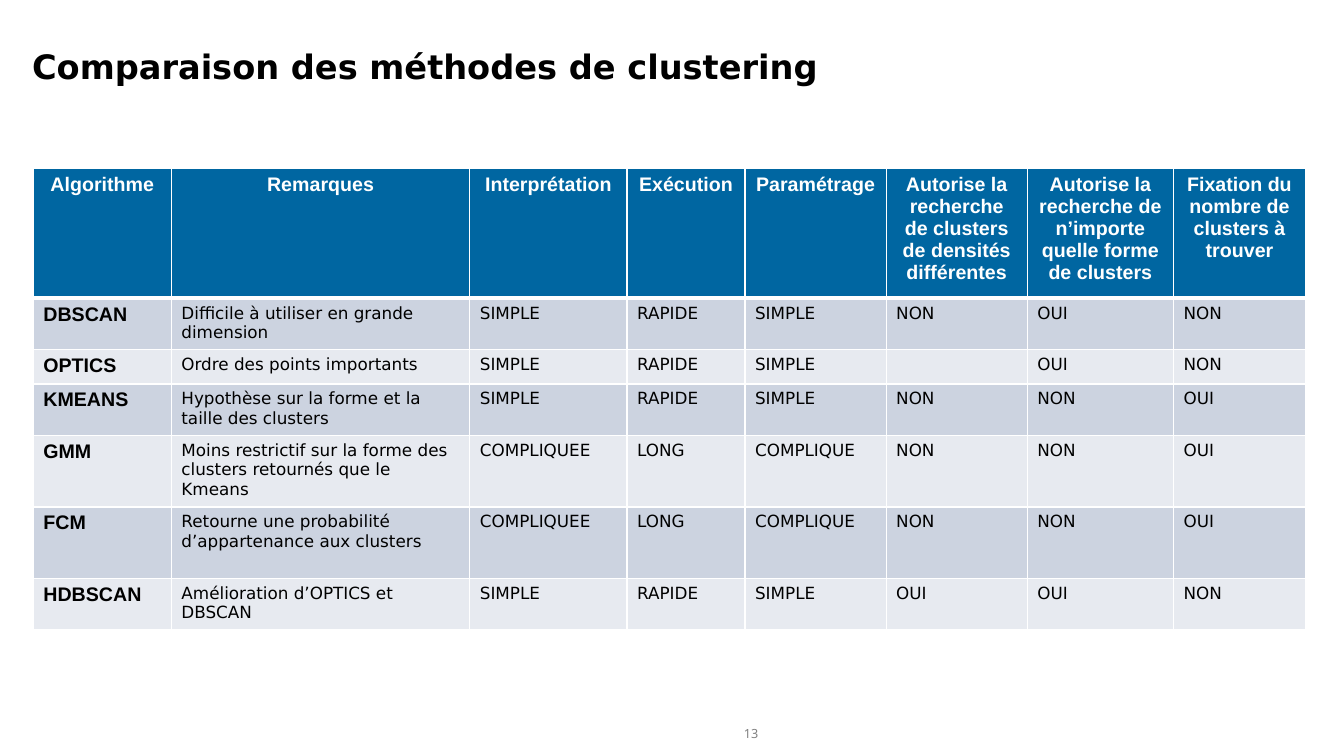
import pptx
import pptx.util
import pptx.dml.color
import pptx.enum.text
import pptx.oxml.ns
from dataclasses import dataclass
from lxml import etree

# Content
TITLE = "Comparaison des méthodes de clustering"
PAGE_NUMBER = "13"
HEADERS = [
    "Algorithme", "Remarques", "Interprétation", "Exécution", "Paramétrage",
    "Autorise la recherche de clusters de densités différentes",
    "Autorise la recherche de n’importe quelle forme de clusters",
    "Fixation du nombre de clusters à trouver",
]
METHODS = [
    ("DBSCAN", "Difficile à utiliser en grande dimension",
     "SIMPLE", "RAPIDE", "SIMPLE", "NON", "OUI", "NON"),
    ("OPTICS", "Ordre des points importants",
     "SIMPLE", "RAPIDE", "SIMPLE", "", "OUI", "NON"),
    ("KMEANS", "Hypothèse sur la forme et la taille des clusters",
     "SIMPLE", "RAPIDE", "SIMPLE", "NON", "NON", "OUI"),
    ("GMM", "Moins restrictif sur la forme des clusters retournés que le Kmeans",
     "COMPLIQUEE", "LONG", "COMPLIQUE", "NON", "NON", "OUI"),
    ("FCM", "Retourne une probabilité d’appartenance aux clusters",
     "COMPLIQUEE", "LONG", "COMPLIQUE", "NON", "NON", "OUI"),
    ("HDBSCAN", "Amélioration d’OPTICS et DBSCAN",
     "SIMPLE", "RAPIDE", "SIMPLE", "OUI", "OUI", "NON"),
]

# Grid, in inches
SLIDE = (13.33, 7.5)
TITLE_AREA = (0.22, 0.41, 12.73, 0.83)
NUMBER_AREA = (7, 7.15, 0.9, 0.26)
TABLE_ORIGIN = (0.33, 1.67)
COLUMNS = [1.37, 2.96, 1.56, 1.17, 1.4, 1.4, 1.45, 1.31]
ROWS = [1.29, 0.51, 0.34, 0.51, 0.71, 0.71, 0.51]


@dataclass(frozen=True)
class Style:
    size: int
    font: str
    color: str
    bold: bool = False


class Theme:
    title = Style(24, "DejaVu Sans", "000000", True)
    header = Style(14, "Arial", "FFFFFF", True)
    method = Style(14, "Arial", "000000", True)
    value = Style(12, "DejaVu Sans", "000000")
    number = Style(9, "Noto Sans", "818181")
    header_fill = "0066A1"
    bands = ("CCD3E0", "E7EAF0")
    border = "FFFFFF"
    thin, thick = 1, 3


Inches = pptx.util.Inches
Pt = pptx.util.Pt
CENTER = pptx.enum.text.PP_ALIGN.CENTER
LEFT = pptx.enum.text.PP_ALIGN.LEFT


def rgb(color):
    return pptx.dml.color.RGBColor.from_string(color)


def write(para, text, style, align=LEFT):
    para.alignment = align
    if not text:
        # An empty cell keeps the row's type size
        end = etree.SubElement(para._p, pptx.oxml.ns.qn("a:endParaRPr"))
        end.set("sz", str(style.size * 100))
        return
    span = para.add_run()
    span.text = text
    span.font.size = Pt(style.size)
    span.font.name = style.font
    span.font.bold = style.bold
    span.font.color.rgb = rgb(style.color)


def add_text(page, area, text, style, align=LEFT, anchor=pptx.enum.text.MSO_ANCHOR.TOP):
    box = page.shapes.add_textbox(*map(Inches, area))
    box.text_frame.word_wrap = True
    box.text_frame.vertical_anchor = anchor
    write(box.text_frame.paragraphs[0], text, style, align)


def set_borders(cell, top, bottom):
    properties = cell._tc.get_or_add_tcPr()
    widths = {"lnL": Theme.thin, "lnR": Theme.thin, "lnT": top, "lnB": bottom}
    for side, width in widths.items():
        line = etree.SubElement(properties, pptx.oxml.ns.qn("a:" + side), w=str(Pt(width)))
        fill = etree.SubElement(line, pptx.oxml.ns.qn("a:solidFill"))
        etree.SubElement(fill, pptx.oxml.ns.qn("a:srgbClr"), val=Theme.border)


def add_comparison(page):
    table = page.shapes.add_table(
        len(ROWS), len(COLUMNS), *map(Inches, (*TABLE_ORIGIN, sum(COLUMNS), sum(ROWS)))
    ).table
    for column, width in zip(table.columns, COLUMNS):
        column.width = Inches(width)
    for row, height in zip(table.rows, ROWS):
        row.height = Inches(height)

    for r, texts in enumerate([HEADERS, *METHODS]):
        is_header = r == 0
        color = Theme.header_fill if is_header else Theme.bands[(r - 1) % 2]
        for c, text in enumerate(texts):
            cell = table.cell(r, c)
            # The heavy rule sits between the header and the first method
            set_borders(cell,
                        top=Theme.thick if r == 1 else Theme.thin,
                        bottom=Theme.thick if is_header else Theme.thin)
            cell.fill.solid()
            cell.fill.fore_color.rgb = rgb(color)
            style = Theme.header if is_header else Theme.method if c == 0 else Theme.value
            write(cell.text_frame.paragraphs[0], text, style, CENTER if is_header else LEFT)


def main():
    deck = pptx.Presentation()
    deck.slide_width, deck.slide_height = map(Inches, SLIDE)
    page = deck.slides.add_slide(deck.slide_layouts[6])

    add_text(page, NUMBER_AREA, PAGE_NUMBER, Theme.number, CENTER,
             pptx.enum.text.MSO_ANCHOR.MIDDLE)
    add_text(page, TITLE_AREA, TITLE, Theme.title)
    add_comparison(page)
    deck.save("out.pptx")


if __name__ == "__main__":
    main()
